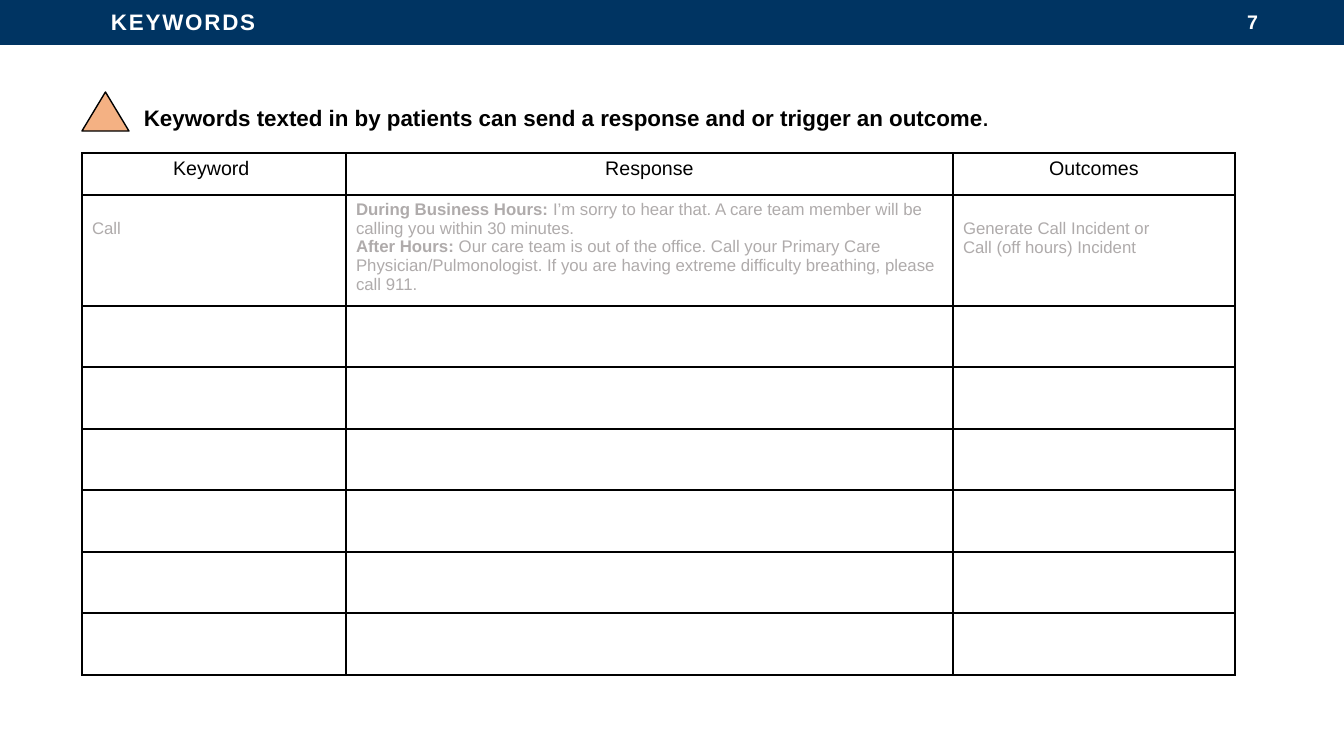
from dataclasses import dataclass

from lxml.etree import SubElement
from pptx import Presentation
from pptx.dml.color import RGBColor
from pptx.enum.shapes import MSO_SHAPE as Shape
from pptx.enum.text import MSO_ANCHOR as Anchor, PP_ALIGN as Align
from pptx.oxml import parse_xml
from pptx.oxml.ns import nsdecls, qn
from pptx.slide import Slide
from pptx.table import _Cell as Cell
from pptx.text.text import TextFrame
from pptx.util import Emu, Pt

FONT = "Arial"
NAVY, WHITE, BLACK, GRAY, PEACH = "003462", "FFFFFF", "000000", "AFABAB", "F4B183"
LEFT, TOP = 82, 153
COLUMNS = [264, 607, 282]
ROWS = [42, 111] + [61, 62] * 3
INSET, LINE = 5, 19


@dataclass(frozen=True)
class Run:
    text: str
    size: float = 12
    color: str = GRAY
    bold: bool = False
    spacing: int = 0


@dataclass(frozen=True)
class Box:
    x: int
    y: int
    w: int
    h: int


@dataclass(frozen=True)
class Entry:
    row: int
    col: int
    lines: list[list[Run]]
    align: Align = Align.LEFT
    top: int = INSET


def px(n: int) -> Emu:
    return Emu(round(n * 914400 / 100.8))


def rgb(value: str) -> RGBColor:
    return RGBColor.from_string(value)


def write(tf: TextFrame, lines: list[list[Run]], align: Align = Align.LEFT) -> None:
    for i, line in enumerate(lines):
        p = tf.paragraphs[0] if i == 0 else tf.add_paragraph()
        p.alignment = align
        for run in line:
            r = p.add_run()
            r.text = run.text
            r.font.name = FONT
            r.font.size = Pt(run.size)
            r.font.bold = run.bold
            r.font.color.rgb = rgb(run.color)
            if run.spacing:
                r.font._element.set("spc", str(run.spacing))


def add_shape(s: Slide, kind: Shape, box: Box, fill: str, line: str = ""):
    sp = s.shapes.add_shape(kind, px(box.x), px(box.y), px(box.w), px(box.h))
    sp.shadow.inherit = False
    sp.fill.solid()
    sp.fill.fore_color.rgb = rgb(fill)
    if line:
        sp.line.color.rgb = rgb(line)
        sp.line.width = Pt(1)
    else:
        sp.line.fill.background()
    return sp


def add_text(s: Slide, box: Box, line: list[Run], align: Align = Align.LEFT,
             anchor: Anchor = Anchor.TOP) -> None:
    sp = s.shapes.add_textbox(px(box.x), px(box.y), px(box.w), px(box.h))
    tf = sp.text_frame
    tf.word_wrap = True
    tf.vertical_anchor = anchor
    write(tf, [line], align)


def style_cell(cell: Cell) -> None:
    cell.fill.background()
    tc_pr = cell._tc.get_or_add_tcPr()
    for i, side in enumerate(("lnL", "lnR", "lnT", "lnB")):
        ln = parse_xml(f'<a:{side} {nsdecls("a")} w="{Pt(1)}"/>')
        SubElement(SubElement(ln, qn("a:solidFill")), qn("a:srgbClr"), val=BLACK)
        tc_pr.insert(i, ln)


def add_keyword_table(s: Slide, entries: list[Entry]) -> None:
    frame = s.shapes.add_table(len(ROWS), len(COLUMNS), px(LEFT), px(TOP),
                               px(sum(COLUMNS)), px(sum(ROWS)))
    table = frame.table
    table.first_row = table.horz_banding = False
    for column, width in zip(table.columns, COLUMNS):
        column.width = px(width)
    for row, height in zip(table.rows, ROWS):
        row.height = px(height)
    for cell in table.iter_cells():
        style_cell(cell)
    for entry in entries:
        cell = table.cell(entry.row, entry.col)
        cell.margin_top = px(entry.top)
        write(cell.text_frame, entry.lines, entry.align)


def main() -> None:
    prs = Presentation()
    prs.slide_width, prs.slide_height = px(1344), px(756)
    s = prs.slides.add_slide(prs.slide_layouts[6])

    bar = add_shape(s, Shape.RECTANGLE, Box(0, -1, 1344, 46), NAVY)
    bar.text_frame.margin_left = px(111)
    bar.text_frame.vertical_anchor = Anchor.MIDDLE
    write(bar.text_frame, [[Run("KEYWORDS", 16, WHITE, True, 130)]])

    add_text(s, Box(134, 99, 866, 37), [
        Run("Keywords texted in by patients can send a response and or trigger an outcome",
            16, BLACK, True),
        Run(".", 13, BLACK, True),
    ])
    add_shape(s, Shape.ISOSCELES_TRIANGLE, Box(82, 92, 47, 39), PEACH, BLACK)
    add_text(s, Box(966, 2, 302, 40), [Run("7", 14, WHITE, True)],
             Align.RIGHT, Anchor.MIDDLE)

    headings = [Entry(0, col, [[Run(text, 14, BLACK)]], Align.CENTER)
                for col, text in enumerate(("Keyword ", "Response", "Outcomes"))]
    example = [
        Entry(1, 0, [[Run("Call")]], top=INSET + LINE),
        Entry(1, 1, [
            [Run("During Business Hours: ", bold=True),
             Run("I’m sorry to hear that. A care team member will be calling you "
                 "within 30 minutes.")],
            [Run("After Hours: ", bold=True),
             Run("Our care team is out of the office. Call your Primary Care "
                 "Physician/Pulmonologist. If you are having extreme difficulty "
                 "breathing, please call 911.")],
        ]),
        Entry(1, 2, [[Run("Generate Call Incident or")],
                     [Run("Call (off hours) Incident")]], top=INSET + LINE),
    ]
    add_keyword_table(s, headings + example)
    prs.save("out.pptx")


if __name__ == "__main__":
    main()
